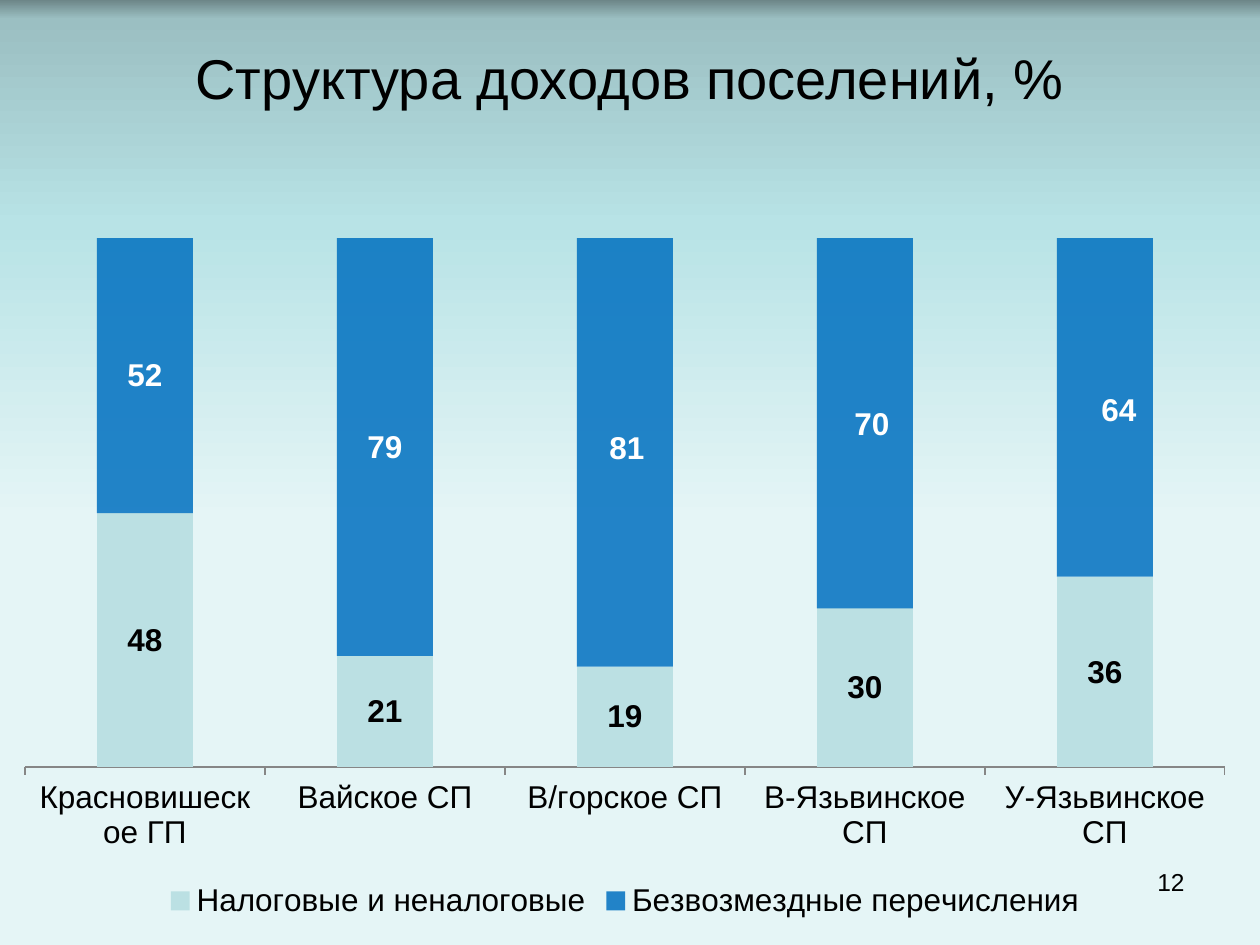
from dataclasses import dataclass, field

import pptx
import pptx.chart.data
import pptx.dml.color
import pptx.enum.chart
import pptx.enum.text
import pptx.oxml
import pptx.oxml.ns
import pptx.util

RGB = pptx.dml.color.RGBColor
EMU_PER_PX = 914400 // 126
FONT = "Arial"
BLACK = RGB(0x00, 0x00, 0x00)
WHITE = RGB(0xFF, 0xFF, 0xFF)
AXIS_GREY = RGB(0x86, 0x86, 0x86)
PALE_TEAL = RGB(0xBB, 0xE0, 0xE3)
BLUE = RGB(0x00, 0x70, 0xC0)
BACKGROUND_STOPS = [
    (0, RGB(0x6D, 0x86, 0x88)),
    (2, RGB(0x9B, 0xBF, 0xC2)),
    (24, RGB(0xB8, 0xE3, 0xE6)),
    (55, RGB(0xE5, 0xF5, 0xF6)),
]


@dataclass
class Box:
    left: int
    top: int
    width: int
    height: int

    def emu(self) -> list[int]:
        return [px(n) for n in (self.left, self.top, self.width, self.height)]


@dataclass
class Income:
    name: str
    shares: list[int]
    color: RGB
    label_color: RGB
    opacity: int = 100
    label_shifts: dict[int, tuple[int, int]] = field(default_factory=dict)


TITLE_BOX = Box(63, 38, 1134, 78)
CHART_BOX = Box(0, 116, 1250, 809)
PLOT_BOX = Box(25, 122, 1200, 529)  # inside the chart
NUMBER_BOX = Box(903, 861, 294, 66)

SETTLEMENTS = ["Красновишеское ГП", "Вайское СП", "В/горское СП",
               "В-Язьвинское СП", "У-Язьвинское СП"]
INCOMES = [
    Income("Налоговые и неналоговые", [48, 21, 19, 30, 36], PALE_TEAL, BLACK),
    Income("Безвозмездные перечисления", [52, 79, 81, 70, 64], BLUE, WHITE,
           opacity=85, label_shifts={2: (2, -4), 3: (7, 1), 4: (14, 3)}),
]


def px(length: int) -> int:
    return length * EMU_PER_PX


def chart_xml(body: str):
    return pptx.oxml.parse_xml(
        f'<c:layout {pptx.oxml.ns.nsdecls("c")}><c:manualLayout>{body}'
        '</c:manualLayout></c:layout>')


def style_font(font, size: int, color: RGB, bold: bool = False) -> None:
    font.name, font.size, font.bold = FONT, pptx.util.Pt(size), bold
    font.color.rgb = color


def write(frame, text: str, size: int, align) -> None:
    frame.text = text
    frame.word_wrap = True
    paragraph = frame.paragraphs[0]
    paragraph.alignment = align
    style_font(paragraph.runs[0].font, size, BLACK)


def paint_background(slide) -> None:
    fill = slide.background.fill
    fill.gradient()
    gradient = slide.background._cSld.find(".//" + pptx.oxml.ns.qn("a:gradFill"))
    for child in list(gradient):
        gradient.remove(child)
    stops = "".join(f'<a:gs pos="{at * 1000}"><a:srgbClr val="{color}"/></a:gs>'
                    for at, color in BACKGROUND_STOPS)
    ns = pptx.oxml.ns.nsdecls("a")
    gradient.append(pptx.oxml.parse_xml(f"<a:gsLst {ns}>{stops}</a:gsLst>"))
    gradient.append(pptx.oxml.parse_xml(f'<a:lin {ns} ang="5400000" scaled="0"/>'))


def style_income(series, income: Income) -> None:
    qn = pptx.oxml.ns.qn
    fill = series.format.fill
    fill.solid()
    fill.fore_color.rgb = income.color
    if income.opacity < 100:
        color = series._element.find(".//" + qn("a:srgbClr"))
        color.append(pptx.oxml.parse_xml(
            f'<a:alpha {pptx.oxml.ns.nsdecls("a")} val="{income.opacity * 1000}"/>'))
    labels = series.data_labels
    labels.show_value = True
    style_font(labels.font, 18, income.label_color, bold=True)

    # Labels nudged away from the middle of their bars
    for point in income.label_shifts:
        style_font(series.points[point].data_label.font, 18, income.label_color, bold=True)
    for label in series._element.iter(qn("c:dLbl")):
        x, y = income.label_shifts[int(label.find(qn("c:idx")).get("val"))]
        label.insert(1, chart_xml(
            f'<c:x val="{x / CHART_BOX.width:.4f}"/><c:y val="{y / CHART_BOX.height:.4f}"/>'))


def place_plot(chart) -> None:
    plot_area = chart._chartSpace.find(".//" + pptx.oxml.ns.qn("c:plotArea"))
    for layout in plot_area.findall(pptx.oxml.ns.qn("c:layout")):
        plot_area.remove(layout)
    plot_area.insert(0, chart_xml(
        '<c:layoutTarget val="inner"/><c:xMode val="edge"/><c:yMode val="edge"/>'
        f'<c:x val="{PLOT_BOX.left / CHART_BOX.width:.3f}"/>'
        f'<c:y val="{PLOT_BOX.top / CHART_BOX.height:.3f}"/>'
        f'<c:w val="{PLOT_BOX.width / CHART_BOX.width:.3f}"/>'
        f'<c:h val="{PLOT_BOX.height / CHART_BOX.height:.3f}"/>'))


def add_income_chart(slide) -> None:
    data = pptx.chart.data.CategoryChartData()
    data.categories = SETTLEMENTS
    for income in INCOMES:
        data.add_series(income.name, income.shares)
    chart = slide.shapes.add_chart(
        pptx.enum.chart.XL_CHART_TYPE.COLUMN_STACKED, *CHART_BOX.emu(), data).chart
    chart.has_title = False
    style_font(chart.font, 18, BLACK)

    bars = chart.plots[0]
    bars.gap_width, bars.overlap = 150, 100
    bars.vary_by_categories = False
    for series, income in zip(bars.series, INCOMES):
        style_income(series, income)

    shares = chart.value_axis
    shares.minimum_scale, shares.maximum_scale = 0, 100
    shares.has_major_gridlines = False
    shares.visible = False
    settlements = chart.category_axis
    settlements.major_tick_mark = pptx.enum.chart.XL_TICK_MARK.OUTSIDE
    settlements.format.line.color.rgb = AXIS_GREY
    settlements.format.line.width = pptx.util.Pt(0.75)

    chart.has_legend = True
    chart.legend.position = pptx.enum.chart.XL_LEGEND_POSITION.BOTTOM
    chart.legend.include_in_layout = False
    place_plot(chart)


def main() -> None:
    deck = pptx.Presentation()
    deck.slide_width, deck.slide_height = pptx.util.Inches(10), pptx.util.Inches(7.5)
    slide = deck.slides.add_slide(deck.slide_layouts[5])
    paint_background(slide)

    # Title
    title = slide.shapes.title
    title.left, title.top, title.width, title.height = TITLE_BOX.emu()
    title.text_frame.vertical_anchor = pptx.enum.text.MSO_ANCHOR.MIDDLE
    write(title.text_frame, "Структура доходов поселений, %", 32,
          pptx.enum.text.PP_ALIGN.CENTER)

    add_income_chart(slide)

    # Slide number
    number = slide.shapes.add_textbox(*NUMBER_BOX.emu())
    write(number.text_frame, "12", 14, pptx.enum.text.PP_ALIGN.RIGHT)

    deck.save("out.pptx")


if __name__ == "__main__":
    main()
